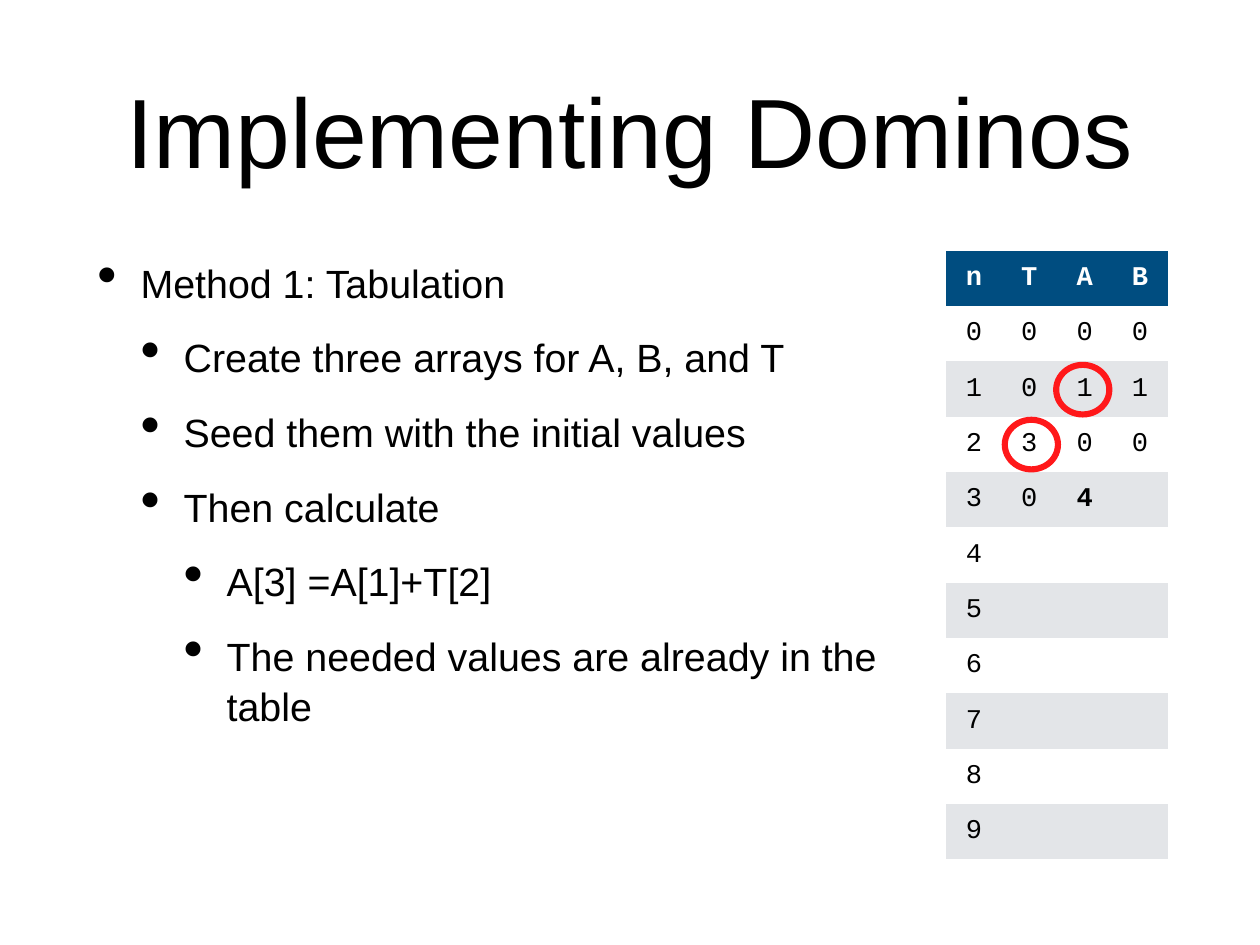
from typing import NamedTuple

from lxml import etree
from pptx import Presentation
from pptx.dml.color import RGBColor
from pptx.enum.shapes import MSO_SHAPE
from pptx.enum.text import MSO_ANCHOR, PP_ALIGN
from pptx.oxml.ns import qn
from pptx.util import Inches, Pt

CENTER, LEFT = PP_ALIGN.CENTER, PP_ALIGN.LEFT
MIDDLE, TOP = MSO_ANCHOR.MIDDLE, MSO_ANCHOR.TOP
OVAL = MSO_SHAPE.OVAL

COLORS = {
    "text": "000000",
    "header": "004D80",
    "header_text": "FFFFFF",
    "odd_row": "FFFFFF",
    "even_row": "E3E5E8",
    "ring": "FF181A",
}
MARGIN = Inches(0.06)
MARGINS = {f"margin_{side}": MARGIN for side in ("left", "top", "right", "bottom")}
INDENT = 0.486
CELL = 0.625
TABLE_LEFT, TABLE_TOP = 10.68, 2.83
NO_GRID_STYLE = "{2D5ABB26-0587-4C30-8999-92F81FD0307C}"


class Bullet(NamedTuple):
    level: int
    text: str


class Ring(NamedTuple):
    left: float
    top: float


BULLETS = [
    Bullet(0, "Method 1: Tabulation"),
    Bullet(1, "Create three arrays for A, B, and T"),
    Bullet(1, "Seed them with the initial values"),
    Bullet(1, "Then calculate"),
    Bullet(2, "A[3] =A[1]+T[2]"),
    Bullet(2, "The needed values are already in the table"),
]
HEADER = "nTAB"
KNOWN_VALUES = ["000", "011", "300", "04"]
ROW_COUNT = 10
NEW_CELL = (4, 2)
RINGS = [Ring(11.92, 4.12), Ring(11.34, 4.74)]


def rgb(name: str) -> RGBColor:
    return RGBColor.from_string(COLORS[name])


def apply(target, values: dict) -> None:
    for name, value in values.items():
        setattr(target, name, value)


def write(p, text: str, size: float, font: str, color: str, bold: bool = False) -> None:
    r = p.add_run()
    r.text = text
    apply(r.font, {"size": Pt(size), "name": font, "bold": bold})
    r.font.color.rgb = rgb(color)


def place(s, left: float, top: float, width: float, height: float) -> None:
    apply(s, {"left": Inches(left), "top": Inches(top),
              "width": Inches(width), "height": Inches(height)})


def add_bullet(p, bullet: Bullet) -> None:
    apply(p, {"level": bullet.level, "alignment": LEFT,
              "space_before": Pt(20), "line_spacing": 1.06})
    pPr = p._p.get_or_add_pPr()
    pPr.set("marL", str(Inches(INDENT * (bullet.level + 1))))
    pPr.set("indent", str(-Inches(INDENT)))
    etree.SubElement(pPr, qn("a:buSzPct"), val="145000")
    etree.SubElement(pPr, qn("a:buChar"), char="•")
    write(p, bullet.text, 32, "Arial", "text")


def add_values_table(slide) -> None:
    rows = [HEADER] + [
        str(n) + (KNOWN_VALUES[n] if n < len(KNOWN_VALUES) else "")
        for n in range(ROW_COUNT)
    ]
    frame = slide.shapes.add_table(
        len(rows), len(HEADER), Inches(TABLE_LEFT), Inches(TABLE_TOP),
        Inches(CELL * len(HEADER)), Inches(CELL * len(rows)))
    for style in frame.element.iter(qn("a:tableStyleId")):
        style.text = NO_GRID_STYLE
    for i, row in enumerate(rows):
        fill = "header" if i == 0 else "odd_row" if i % 2 else "even_row"
        color = "header_text" if i == 0 else "text"
        for j in range(len(HEADER)):
            cell = frame.table.cell(i, j)
            apply(cell, {**MARGINS, "vertical_anchor": MIDDLE})
            cell.fill.solid()
            cell.fill.fore_color.rgb = rgb(fill)
            if j < len(row):
                p = cell.text_frame.paragraphs[0]
                p.alignment = CENTER
                bold = i == 0 or (i, j) == NEW_CELL
                write(p, row[j], 22, "Courier New", color, bold)


def add_ring(slide, ring: Ring) -> None:
    s = slide.shapes.add_shape(OVAL, Inches(ring.left), Inches(ring.top),
                               Inches(0.6), Inches(0.56))
    s.shadow.inherit = False
    s.fill.background()
    s.line.color.rgb = rgb("ring")
    s.line.width = Pt(5)


def main() -> None:
    prs = Presentation()
    apply(prs, {"slide_width": Inches(14.22), "slide_height": Inches(10.67)})
    slide = prs.slides.add_slide(prs.slide_layouts[5])

    # Title
    title = slide.shapes.title
    place(title, 1.04, 0.28, 12.14, 2.36)
    apply(title.text_frame, {**MARGINS, "vertical_anchor": MIDDLE, "word_wrap": True})
    p = title.text_frame.paragraphs[0]
    p.alignment = CENTER
    write(p, "Implementing Dominos", 80, "Arial", "text")

    # Method steps
    body = slide.shapes.add_textbox(Inches(1.04), Inches(2.83), Inches(9.29), Inches(6.88))
    tf = body.text_frame
    apply(tf, {**MARGINS, "vertical_anchor": TOP, "word_wrap": True})
    for i, bullet in enumerate(BULLETS):
        add_bullet(tf.add_paragraph() if i else tf.paragraphs[0], bullet)

    # Table of values, with rings around the two that are added
    add_values_table(slide)
    for ring in RINGS:
        add_ring(slide, ring)

    prs.save("out.pptx")


if __name__ == "__main__":
    main()
